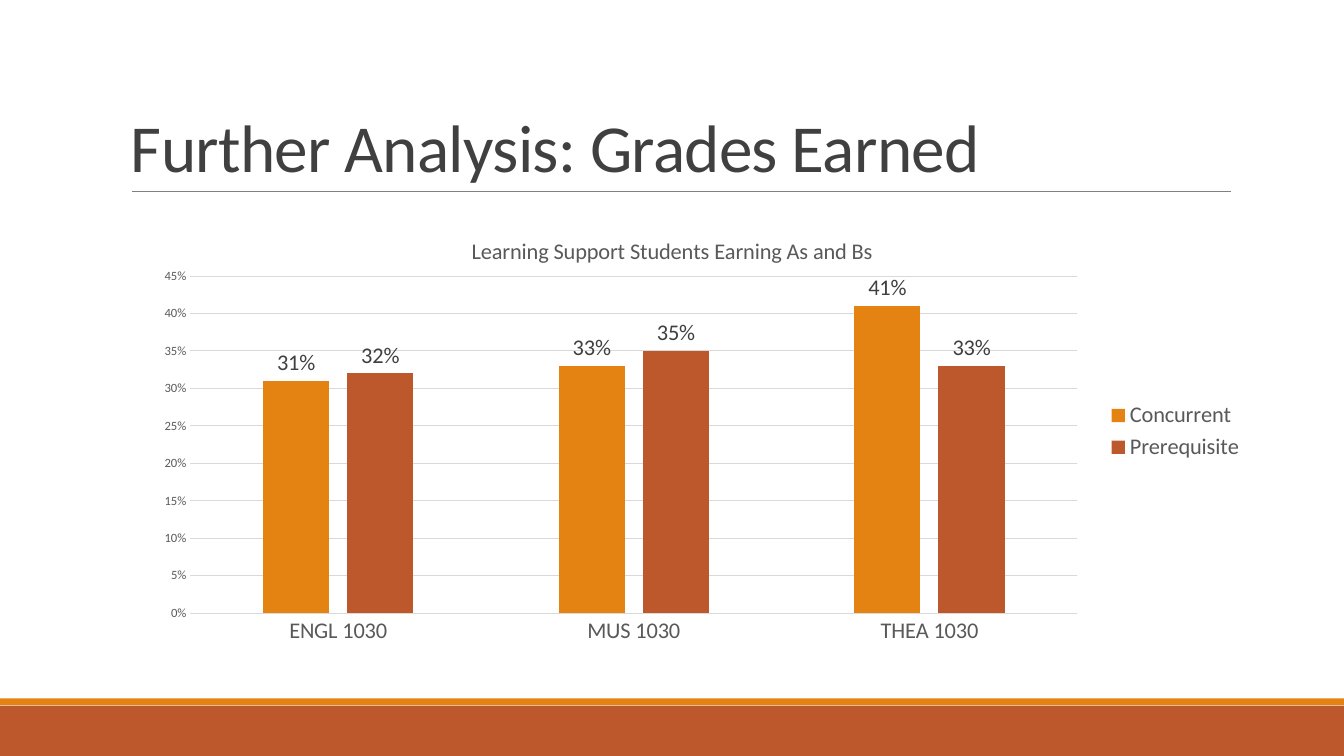
from dataclasses import dataclass

from lxml import etree
from pptx import Presentation
from pptx.chart.data import CategoryChartData
from pptx.dml.color import RGBColor
from pptx.enum.chart import XL_CHART_TYPE, XL_LABEL_POSITION, XL_LEGEND_POSITION, XL_TICK_MARK
from pptx.enum.shapes import MSO_CONNECTOR, MSO_SHAPE
from pptx.enum.text import MSO_ANCHOR
from pptx.oxml import parse_xml
from pptx.oxml.ns import nsdecls, qn
from pptx.util import Cm, Pt

COLUMNS = XL_CHART_TYPE.COLUMN_CLUSTERED
OUTSIDE_END = XL_LABEL_POSITION.OUTSIDE_END
LEGEND_RIGHT = XL_LEGEND_POSITION.RIGHT
NO_TICK = XL_TICK_MARK.NONE
STRAIGHT = MSO_CONNECTOR.STRAIGHT
RECTANGLE = MSO_SHAPE.RECTANGLE
BOTTOM = MSO_ANCHOR.BOTTOM

SLIDE_WIDTH, SLIDE_HEIGHT = 33.87, 19.05
PERCENT = "0%"


@dataclass(frozen=True)
class Theme:
    """Colours, font and type sizes of the slide."""
    font: str = "Calibri"
    orange: str = "E48312"
    rust: str = "BD582C"
    dark: str = "404040"
    grey: str = "595959"
    rule: str = "808080"
    grid: str = "D9D9D9"
    title: int = 48
    label: int = 16
    scale: int = 9


class SlideBuilder:
    """Adds styled elements to one slide; lengths are in centimetres."""

    def __init__(self, slide, theme):
        self.slide = slide
        self.theme = theme

    def style_font(self, font, size, color):
        font.name = self.theme.font
        font.size = Pt(size)
        font.bold = False
        font.color.rgb = RGBColor.from_string(color)

    def style_line(self, line, color, width):
        line.color.rgb = RGBColor.from_string(color)
        line.width = Pt(width)

    def band(self, top, height, color):
        shape = self.slide.shapes.add_shape(RECTANGLE, 0, Cm(top), Cm(SLIDE_WIDTH), Cm(height))
        shape.shadow.inherit = False
        shape.fill.solid()
        shape.fill.fore_color.rgb = RGBColor.from_string(color)
        shape.line.fill.background()

    def rule(self, left, right, top):
        connector = self.slide.shapes.add_connector(STRAIGHT, Cm(left), Cm(top), Cm(right), Cm(top))
        self.style_line(connector.line, self.theme.rule, 0.5)
        etree.SubElement(connector._element.spPr, qn("a:effectLst"))

    def title(self, text, left, top, width, height):
        box = self.slide.shapes.add_textbox(Cm(left), Cm(top), Cm(width), Cm(height))
        frame = box.text_frame
        frame.word_wrap = True
        frame.vertical_anchor = BOTTOM
        paragraph = frame.paragraphs[0]
        paragraph.line_spacing = 0.85
        run = paragraph.add_run()
        run.text = text
        self.style_font(paragraph.font, self.theme.title, self.theme.dark)
        self.style_font(run.font, self.theme.title, self.theme.dark)
        run.font._element.set("spc", "-50")

    def place(self, element, **fractions):
        """Fix a chart part at fractions of the chart area."""
        for layout in element.findall(qn("c:layout")):
            element.remove(layout)
        target = '<c:layoutTarget val="inner"/>' if "w" in fractions else ""
        modes = "".join(f'<c:{axis}Mode val="edge"/>' for axis in "xy")
        values = "".join(f'<c:{name} val="{value}"/>' for name, value in fractions.items())
        layout = parse_xml(f'<c:layout {nsdecls("c")}><c:manualLayout>{target}{modes}{values}'
                           '</c:manualLayout></c:layout>')
        text = element.find(qn("c:tx"))
        element.insert(0 if text is None else 1, layout)

    def column_chart(self, title, categories, series, left, top, width, height):
        theme = self.theme
        data = CategoryChartData(number_format=PERCENT)
        data.categories = categories
        for name, values, _ in series:
            data.add_series(name, values)
        chart = self.slide.shapes.add_chart(
            COLUMNS, Cm(left), Cm(top), Cm(width), Cm(height), data).chart
        self.style_font(chart.font, theme.label, theme.grey)

        chart.has_title = True
        paragraph = chart.chart_title.text_frame.paragraphs[0]
        paragraph.text = title
        self.style_font(paragraph.font, theme.label, theme.grey)
        self.place(chart.chart_title._element, x=0.29, y=0.05)
        self.place(chart._chartSpace.chart.plotArea, x=0.04, y=0.15, w=0.8, h=0.76)

        chart.has_legend = True
        chart.legend.position = LEGEND_RIGHT
        chart.legend.include_in_layout = False
        self.style_font(chart.legend.font, theme.label, theme.grey)

        for axis, size in ((chart.category_axis, theme.label), (chart.value_axis, theme.scale)):
            axis.major_tick_mark = axis.minor_tick_mark = NO_TICK
            self.style_font(axis.tick_labels.font, size, theme.grey)
        self.style_line(chart.category_axis.format.line, theme.grid, 0.75)
        scale = chart.value_axis
        scale.minimum_scale, scale.maximum_scale, scale.major_unit = 0, 0.45, 0.05
        scale.tick_labels.number_format = PERCENT
        scale.tick_labels.number_format_is_linked = False
        scale.format.line.fill.background()
        self.style_line(scale.major_gridlines.format.line, theme.grid, 0.75)

        plot = chart.plots[0]
        plot.gap_width, plot.overlap = 219, -27
        plot.vary_by_categories = False
        for columns, (_, _, color) in zip(plot.series, series):
            columns.format.fill.solid()
            columns.format.fill.fore_color.rgb = RGBColor.from_string(color)
            labels = columns.data_labels
            labels.show_value = True
            labels.position = OUTSIDE_END
            labels.number_format = PERCENT
            labels.number_format_is_linked = False
            self.style_font(labels.font, theme.label, theme.dark)


def main():
    presentation = Presentation()
    presentation.slide_width, presentation.slide_height = Cm(SLIDE_WIDTH), Cm(SLIDE_HEIGHT)
    theme = Theme()
    builder = SlideBuilder(presentation.slides.add_slide(presentation.slide_layouts[6]), theme)
    builder.band(17.78, 1.27, theme.rust)
    builder.band(17.6, 0.17, theme.orange)
    builder.rule(3.33, 31.01, 4.83)
    builder.title("Further Analysis: Grades Earned", 3.05, 0.79, 27.94, 4.04)
    builder.column_chart(
        "Learning Support Students Earning As and Bs",
        ("ENGL 1030", "MUS 1030", "THEA 1030"),
        (("Concurrent", (0.31, 0.33, 0.41), theme.orange),
         ("Prerequisite", (0.32, 0.35, 0.33), theme.rust)),
        3.68, 5.28, 27.94, 11.18)
    presentation.save("out.pptx")


if __name__ == "__main__":
    main()
